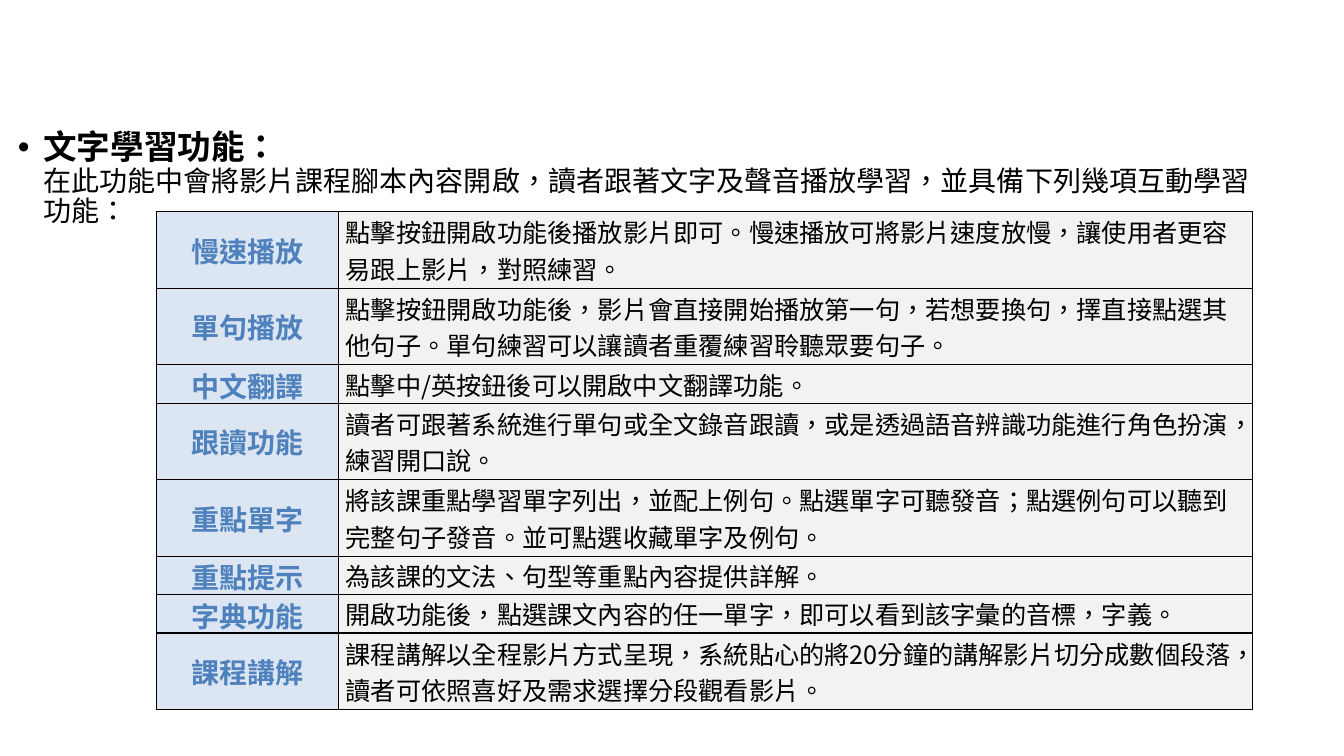
from lxml import etree
from pptx import Presentation
from pptx import util as u
from pptx.dml.color import RGBColor
from pptx.enum import text
from pptx.oxml.ns import qn

COLORS = {"ink": "000000", "label": "4F81BD", "label_fill": "DCE6F2", "detail_fill": "F2F2F2"}
FONT = "Noto Sans CJK TC"
EMU_PER_PX = 9144

HEADING = "文字學習功能："
INTRO = "在此功能中會將影片課程腳本內容開啟，讀者跟著文字及聲音播放學習，並具備下列幾項互動學習功能："
FEATURES = [
    ("慢速播放", 2, "點擊按鈕開啟功能後播放影片即可。慢速播放可將影片速度放慢，讓使用者更容易跟上影片，對照練習。"),
    ("單句播放", 2, "點擊按鈕開啟功能後，影片會直接開始播放第一句，若想要換句，擇直接點選其他句子。單句練習可以讓讀者重覆練習聆聽眾要句子。"),
    ("中文翻譯", 1, "點擊中/英按鈕後可以開啟中文翻譯功能。"),
    ("跟讀功能", 2, "讀者可跟著系統進行單句或全文錄音跟讀，或是透過語音辨識功能進行角色扮演，練習開口說。"),
    ("重點單字", 2, "將該課重點學習單字列出，並配上例句。點選單字可聽發音；點選例句可以聽到完整句子發音。並可點選收藏單字及例句。"),
    ("重點提示", 1, "為該課的文法、句型等重點內容提供詳解。"),
    ("字典功能", 1, "開啟功能後，點選課文內容的任一單字，即可以看到該字彙的音標，字義。"),
    ("課程講解", 2, "課程講解以全程影片方式呈現，系統貼心的將20分鐘的講解影片切分成數個段落，讀者可依照喜好及需求選擇分段觀看影片。"),
]


def px(length):
    return u.Emu(length * EMU_PER_PX)


def write(paragraph, words, size=18, color="ink", bold=False, align=None):
    if align is not None:
        paragraph.alignment = align
    run = paragraph.add_run()
    run.text = words
    run.font.size = u.Pt(size)
    run.font.bold = bold
    run.font.color.rgb = RGBColor.from_string(COLORS[color])
    run.font.name = FONT
    properties = run.font._element
    properties.set("lang", "zh-TW")
    etree.SubElement(properties, qn("a:ea"), typeface=FONT)


class FeatureSlide:
    def __init__(self, deck):
        self.slide = deck.slides.add_slide(deck.slide_layouts[6])

    def intro(self, left, top, width, height):
        frame = self.slide.shapes.add_textbox(px(left), px(top), px(width), px(height)).text_frame
        frame.word_wrap = True
        paragraph = frame.paragraphs[0]
        paragraph.level = 1
        paragraph.line_spacing = 0.9
        self.bullet(paragraph, 75, -25)
        write(paragraph, HEADING, size=24, bold=True)
        paragraph.add_line_break()
        write(paragraph, INTRO, size=20)

    def bullet(self, paragraph, margin, indent):
        properties = paragraph._p.get_or_add_pPr()
        properties.set("marL", str(px(margin)))
        properties.set("indent", str(px(indent)))
        color = etree.SubElement(properties, qn("a:buClr"))
        etree.SubElement(color, qn("a:srgbClr"), val=COLORS["ink"])
        etree.SubElement(properties, qn("a:buFont"), typeface="Arial")
        etree.SubElement(properties, qn("a:buChar"), char="•")

    def features(self, left, top, widths, line_height):
        height = line_height * sum(lines for _, lines, _ in FEATURES)
        table = self.slide.shapes.add_table(
            len(FEATURES), len(widths), px(left), px(top), px(sum(widths)), px(height)).table
        table.first_row = table.horz_banding = False
        for column, width in zip(table.columns, widths):
            column.width = px(width)
        for row, (label, lines, detail) in zip(table.rows, FEATURES):
            row.height = px(lines * line_height)
            label_cell, detail_cell = row.cells
            self.cell(label_cell, label, "label_fill", size=20, color="label",
                      bold=True, align=text.PP_ALIGN.CENTER)
            self.cell(detail_cell, detail, "detail_fill")

    def cell(self, cell, words, fill, **style):
        cell.margin_left = cell.margin_right = px(7)
        cell.margin_top = cell.margin_bottom = 0
        cell.vertical_anchor = text.MSO_ANCHOR.MIDDLE
        properties = cell._tc.get_or_add_tcPr()
        for side in "LRTB":
            border = etree.SubElement(properties, qn(f"a:ln{side}"), w=str(u.Pt(1)))
            solid = etree.SubElement(border, qn("a:solidFill"))
            etree.SubElement(solid, qn("a:srgbClr"), val=COLORS["ink"])
        cell.fill.solid()
        cell.fill.fore_color.rgb = RGBColor.from_string(COLORS[fill])
        write(cell.text_frame.paragraphs[0], words, **style)


def main():
    deck = Presentation()
    deck.slide_width, deck.slide_height = px(1333), px(750)
    page = FeatureSlide(deck)
    page.intro(-42, 125, 1305, 116)
    page.features(155, 210, (181, 906), 38)
    deck.save("out.pptx")


if __name__ == "__main__":
    main()
